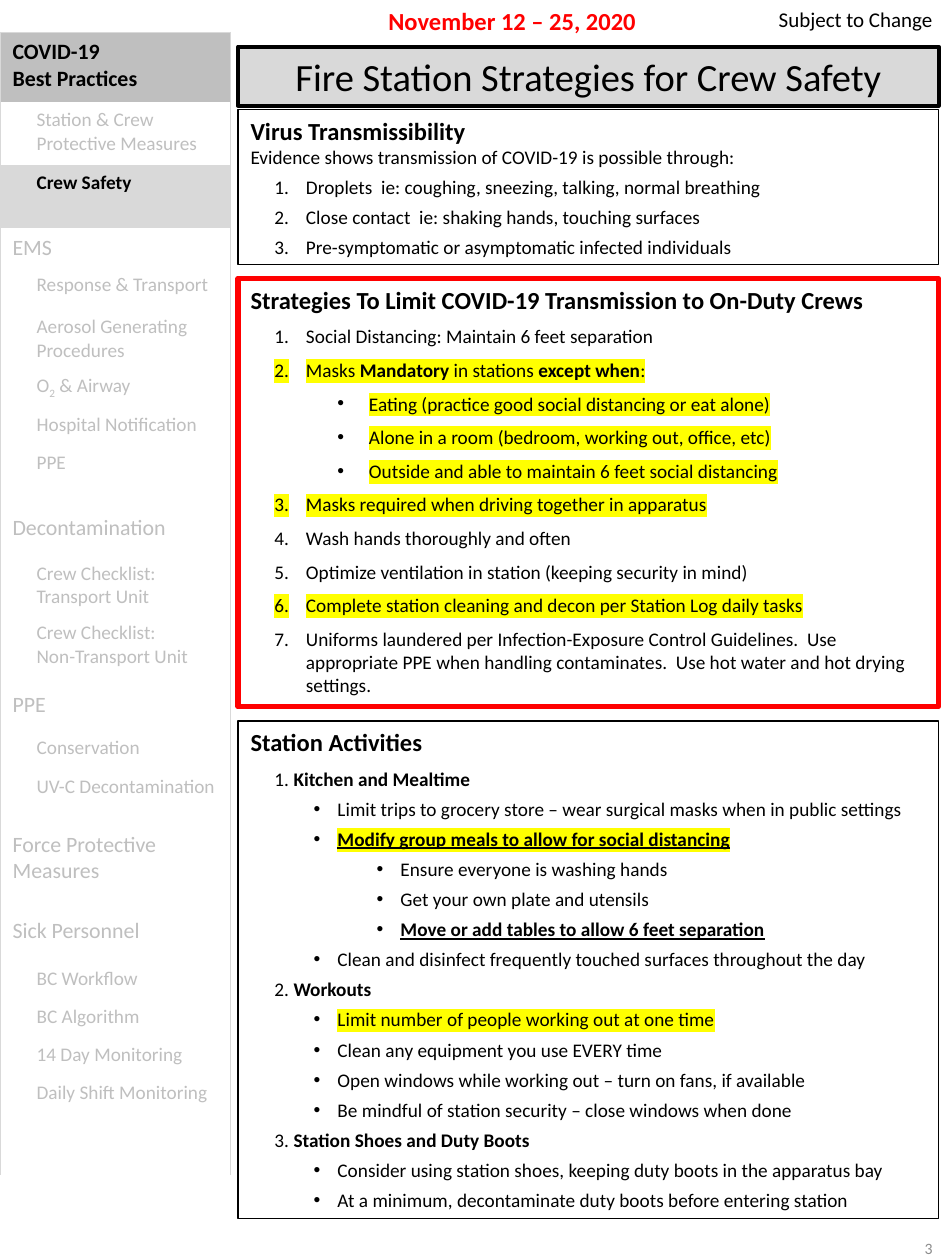
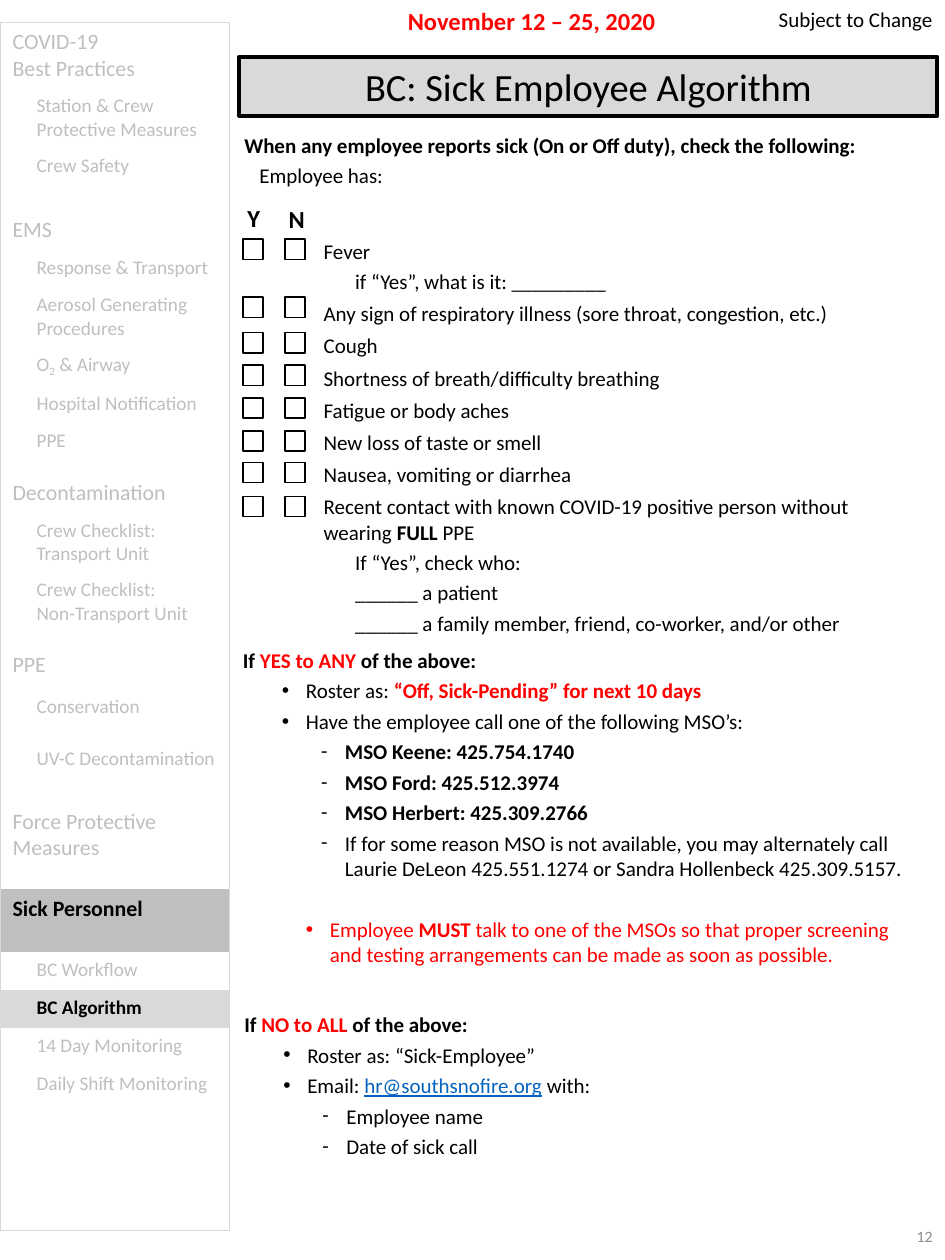
from lxml import etree
from pptx import Presentation
from pptx import util as u
from pptx.dml.color import RGBColor
from pptx.enum import shapes, text
from pptx.oxml import ns

FONT = "Calibri"
COLORS = {
    "ink": "000000", "alert": "FF0000", "mark": "FFFF00", "link": "0563C1",
    "muted": "BFBFBF", "band": "D9D9D9", "page": "8C8C8C", "paper": "FFFFFF",
}

# Paragraph styles; left and hang in inches, before and line in points
STYLES = {
    "date": dict(size=14, flags="br", align="c"),
    "notice": dict(size=12, align="r"),
    "number": dict(size=9, flags="p", align="r"),
    "title": dict(size=22, align="c"),
    "nav head": dict(size=12.5, flags="m"),
    "nav item": dict(size=11, flags="m", left=0.19),
    "nav head on": dict(size=12.5, flags="b"),
    "nav item on": dict(size=11, flags="b", left=0.19),
    "head": dict(size=14, flags="b"),
    "body": dict(size=11),
    "route": dict(size=11, level=1, left=0.44, hang=0.25, before=3, line=14.2, bullet="1."),
    "rule": dict(size=11, left=0.44, hang=0.25, before=6, bullet="1."),
    "exception": dict(size=11, level=1, left=0.94, hang=0.25, before=6, bullet="•"),
    "first activity": dict(size=11, left=0.19, before=6),
    "activity": dict(size=11, left=0.19, before=3, line=14.2),
    "step": dict(size=11, level=1, left=0.69, hang=0.19, before=3, line=14.2, bullet="•"),
    "detail": dict(size=11, level=2, left=1.19, hang=0.19, before=3, line=14.2, bullet="•"),
    "question": dict(size=12, flags="b"),
    "intro": dict(size=12, left=0.12, before=3),
    "column": dict(size=14, flags="b", align="c"),
    "symptom": dict(size=12, left=0.38, before=4),
    "follow-up": dict(size=12, left=0.63, before=3),
    "action": dict(size=12, left=0.5, hang=0.19, before=3, bullet="•"),
    "contact": dict(size=12, level=1, left=0.81, hang=0.19, before=3, bullet="-"),
    "must": dict(size=12, level=1, left=0.69, hang=0.19, before=20.6, bullet="•", flags="r"),
}
ALIGN = {"l": text.PP_ALIGN.LEFT, "c": text.PP_ALIGN.CENTER, "r": text.PP_ALIGN.RIGHT}
# Run flags: b bold, u underlined, s subscript, h highlighted; the rest pick a colour
FLAG_COLORS = {"r": "alert", "l": "link", "m": "muted", "p": "page"}


def write(frame, paragraphs):
    """Fill a text frame with (style, run, ...); a run is text or (text, flags)."""
    for i, (name, *runs) in enumerate(paragraphs):
        style = STYLES[name]
        para = frame.add_paragraph() if i else frame.paragraphs[0]
        para.alignment = ALIGN[style.get("align", "l")]
        para.level = style.get("level", 0)
        if i:
            para.space_before = u.Pt(style.get("before", 0))
        if "line" in style:
            para.line_spacing = u.Pt(style["line"])
        props = para._p.get_or_add_pPr()
        props.set("marL", str(u.Inches(style.get("left", 0))))
        props.set("indent", str(-u.Inches(style.get("hang", 0))))
        bullet = style.get("bullet")
        if bullet == "1.":
            etree.SubElement(props, ns.qn("a:buAutoNum"), type="arabicPeriod")
        elif bullet:
            etree.SubElement(props, ns.qn("a:buFont"), typeface="Arial" if bullet == "•" else FONT)
            etree.SubElement(props, ns.qn("a:buChar"), char=bullet)
        for item in runs:
            words, flags = (item, "") if isinstance(item, str) else item
            flags += style.get("flags", "")
            if words == "\n":
                para.add_line_break()
                continue
            run = para.add_run()
            run.text = words
            font = run.font
            font.name, font.size = FONT, u.Pt(style["size"])
            font.bold, font.underline = "b" in flags, "u" in flags
            color = next((FLAG_COLORS[f] for f in flags if f in FLAG_COLORS), "ink")
            font.color.rgb = RGBColor.from_string(COLORS[color])
            if "s" in flags:
                font._element.set("baseline", "-25000")
            if "h" in flags:
                mark = etree.Element(ns.qn("a:highlight"))
                etree.SubElement(mark, ns.qn("a:srgbClr"), val=COLORS["mark"])
                font._element.find(ns.qn("a:solidFill")).addnext(mark)


def box(slide, at, paragraphs=(), line=None, width=1, fill=None, anchor=text.MSO_ANCHOR.TOP):
    """Place a text box, or a rectangle when a line colour is given."""
    place = [u.Inches(v) for v in at]
    if line:
        shape = slide.shapes.add_shape(shapes.MSO_SHAPE.RECTANGLE, *place)
        shape.shadow.inherit = False
        shape.line.color.rgb = RGBColor.from_string(COLORS[line])
        shape.line.width = u.Pt(width)
        if fill:
            shape.fill.solid()
            shape.fill.fore_color.rgb = RGBColor.from_string(COLORS[fill])
        else:
            shape.fill.background()
    else:
        shape = slide.shapes.add_textbox(*place)
    shape.text_frame.word_wrap = True
    shape.text_frame.vertical_anchor = anchor
    write(shape.text_frame, paragraphs)


# Navigation entries: level, then one list of runs per paragraph
NAV = [
    ("head", ["COVID-19"], ["Best Practices"]),
    ("item", ["Station & Crew Protective Measures"]),
    ("item", ["Crew Safety"]),
    ("head", ["EMS"]),
    ("item", ["Response & Transport"]),
    ("item", ["Aerosol Generating Procedures"]),
    ("item", ["O", ("2", "s"), " & Airway"]),
    ("item", ["Hospital Notification"]),
    ("item", ["PPE"]),
    ("head", ["Decontamination"]),
    ("item", ["Crew Checklist: Transport Unit"]),
    ("item", ["Crew Checklist:"], ["Non-Transport Unit"]),
    ("head", ["PPE"]),
    ("item", ["Conservation"]),
    ("item", ["UV-C Decontamination"]),
    ("head", ["Force Protective Measures"]),
    ("head", ["Sick Personnel"]),
    ("item", ["BC Workflow"]),
    ("item", ["BC Algorithm"]),
    ("item", ["14 Day Monitoring"]),
    ("item", ["Daily Shift Monitoring"]),
]
PAGES = [
    dict(title="Fire Station Strategies for Crew Safety", title_at=(1.89, 0.37, 5.56, 0.47),
         date_at=(2.58, 0, 2.97, 0.34), number="3", number_top=9.64,
         nav_top=0.26, nav_width=1.83, active=(0, 2), closed=False,
         rows=[0.55, 0.5, 0.5, 0.31, 0.33, 0.47, 0.3, 0.3, 0.51, 0.37, 0.47, 0.56, 0.35,
               0.31, 0.45, 0.69, 0.39, 0.3, 0.3, 0.3, 0.3, 0.5]),
    dict(title="BC: Sick Employee Algorithm", title_at=(1.9, 0.45, 5.54, 0.47),
         date_at=(2.78, 0, 2.88, 0.57), number="12", number_top=9.55,
         nav_top=0.18, nav_width=1.82, active=(16, 18), closed=True,
         rows=[0.52, 0.47, 0.5, 0.31, 0.3, 0.47, 0.3, 0.3, 0.4, 0.3, 0.47, 0.59, 0.34,
               0.41, 0.49, 0.69, 0.5, 0.3, 0.3, 0.3, 0.3, 0.48, 0.53]),
]

prs = Presentation()
prs.slide_width, prs.slide_height = u.Inches(7.5), u.Inches(10)

# Shared header, navigation and page number
for page in PAGES:
    slide = prs.slides.add_slide(prs.slide_layouts[6])
    box(slide, (5.81, page["number_top"], 1.69, 0.53), [("number", page["number"])],
        anchor=text.MSO_ANCHOR.MIDDLE)
    box(slide, (5.81, 0, 1.69, 0.3), [("notice", "Subject to Change")])
    box(slide, page["date_at"], [("date", "November 12 – 25, 2020")])
    box(slide, page["title_at"], [("title", page["title"])], "ink", 2.25, "band")

    rows = page["rows"]
    nav = slide.shapes.add_table(
        len(rows), 1, 0, u.Inches(page["nav_top"]),
        u.Inches(page["nav_width"]), u.Inches(sum(rows))).table
    nav.first_row = nav.horz_banding = False
    for i, height in enumerate(rows):
        nav.rows[i].height = u.Inches(height)
        cell = nav.cell(i, 0)
        fill = "paper"
        if i < len(NAV):
            level, *lines = NAV[i]
            style = f"nav {level}"
            if i in page["active"]:
                style += " on"
                fill = "muted" if level == "head" else "band"
            write(cell.text_frame, [(style, *runs) for runs in lines])
        edges = {"L": True, "R": True, "T": i == 0, "B": page["closed"] and i == len(rows) - 1}
        for side, drawn in edges.items():
            edge = etree.SubElement(cell._tc.get_or_add_tcPr(), ns.qn(f"a:ln{side}"), w="12700")
            paint = etree.SubElement(edge, ns.qn("a:solidFill" if drawn else "a:noFill"))
            if drawn:
                etree.SubElement(paint, ns.qn("a:srgbClr"), val=COLORS["band"])
        cell.fill.solid()
        cell.fill.fore_color.rgb = RGBColor.from_string(COLORS[fill])

crew_safety, sick_algorithm = prs.slides

# Crew safety: three framed panels
box(crew_safety, (1.89, 0.87, 5.56, 1.23), [
    ("head", "Virus Transmissibility"),
    ("body", "Evidence shows transmission of COVID-19 is possible through:"),
    ("route", "Droplets  ie: coughing, sneezing, talking, normal breathing"),
    ("route", "Close contact  ie: shaking hands, touching surfaces"),
    ("route", "Pre-symptomatic or asymptomatic infected individuals"),
], "ink")
box(crew_safety, (1.89, 2.21, 5.56, 3.4), [
    ("head", "Strategies To Limit COVID-19 Transmission to On-Duty Crews"),
    ("rule", "Social Distancing: Maintain 6 feet separation"),
    ("rule", ("Masks ", "h"), ("Mandatory", "hb"), (" in stations ", "h"),
     ("except when", "hb"), (":", "h")),
    ("exception", ("Eating (practice good social distancing or eat alone)", "h")),
    ("exception", ("Alone in a room (bedroom, working out, office, etc)", "h")),
    ("exception", ("Outside and able to maintain 6 feet social distancing", "h")),
    ("rule", ("Masks required when driving together in apparatus", "h")),
    ("rule", "Wash hands thoroughly and often"),
    ("rule", "Optimize ventilation in station (keeping security in mind)"),
    ("rule", ("Complete station cleaning and decon per Station Log daily tasks", "h")),
    ("rule", "Uniforms laundered per Infection-Exposure Control Guidelines.  Use appropriate PPE "
     "when handling contaminates.  Use hot water and hot drying settings."),
], "alert", 3)
box(crew_safety, (1.89, 5.72, 5.56, 3.95), [
    ("head", "Station Activities"),
    ("first activity", "1. ", ("Kitchen and Mealtime", "b")),
    ("step", "Limit trips to grocery store – wear surgical masks when in public settings"),
    ("step", ("Modify group meals to allow for social distancing", "buh")),
    ("detail", "Ensure everyone is washing hands"),
    ("detail", "Get your own plate and utensils"),
    ("detail", ("Move or add tables to allow 6 feet separation", "bu")),
    ("step", "Clean and disinfect frequently touched surfaces throughout the day"),
    ("activity", "2. ", ("Workouts", "b")),
    ("step", ("Limit number of people working out at one time", "h")),
    ("step", "Clean any equipment you use EVERY time"),
    ("step", "Open windows while working out – turn on fans, if available"),
    ("step", "Be mindful of station security – close windows when done"),
    ("activity", "3. ", ("Station Shoes and Duty Boots", "b")),
    ("step", "Consider using station shoes, keeping duty boots in the apparatus bay"),
    ("step", "At a minimum, decontaminate duty boots before entering station"),
], "ink")

# Sick employee: symptom checklist
box(sick_algorithm, (1.84, 1, 5.19, 0.55), [
    ("question", "When any employee reports sick (On or Off duty), check the following:"),
    ("intro", "Employee has:"),
])
box(sick_algorithm, (2.09, 1.84, 5.29, 3.29), [
    ("symptom", "Fever"),
    ("follow-up", "if “Yes”, what is it: _________"),
    ("symptom", "Any sign of respiratory illness (sore throat, congestion, etc.)"),
    ("symptom", "Cough"),
    ("symptom", "Shortness of breath/difficulty breathing"),
    ("symptom", "Fatigue or body aches"),
    ("symptom", "New loss of taste or smell"),
    ("symptom", "Nausea, vomiting or diarrhea"),
    ("symptom", "Recent contact with known COVID-19 positive person without wearing ",
     ("FULL ", "b"), "PPE"),
    ("follow-up", "If “Yes”, check who:"),
    ("follow-up", "______ a patient"),
    ("follow-up", "______ a family member, friend, co-worker, and/or other"),
])
for answer, label_left, label_top, check_left in [("Y", 1.83, 1.56, 1.93), ("N", 2.17, 1.57, 2.26)]:
    box(sick_algorithm, (label_left, label_top, 0.37, 0.34), [("column", answer)])
    for check_top in (1.9, 2.36, 2.64, 2.9, 3.16, 3.42, 3.67, 3.94):
        box(sick_algorithm, (check_left, check_top, 0.16, 0.16), line="ink")

# Sick employee: what to do for each outcome
box(sick_algorithm, (1.83, 5.09, 5.67, 2.66), [
    ("question", "If ", ("YES to ANY ", "r"), "of the above:"),
    ("action", "Roster as: ", ("“Off, Sick-Pending” for next 10 days", "br")),
    ("action", "Have the employee call one of the following MSO’s:"),
    ("contact", ("MSO Keene: 425.754.1740", "b")),
    ("contact", ("MSO Ford: 425.512.3974", "b")),
    ("contact", ("MSO Herbert: 425.309.2766", "b")),
    ("contact", "If for some reason MSO is not available, you may alternately call "
     "Laurie DeLeon 425.551.1274 or Sandra Hollenbeck 425.309.5157."),
    ("must", "Employee ", ("MUST", "b"), " talk to one of the MSOs so that proper screening",
     "\n", "and testing arrangements can be made as soon as possible."),
])
box(sick_algorithm, (1.84, 7.98, 5.19, 1.48), [
    ("question", "If ", ("NO to ALL ", "r"), "of the above:"),
    ("action", "Roster as: “Sick-Employee”"),
    ("action", "Email: ", ("hr@southsnofire.org", "lu"), " with:"),
    ("contact", "Employee name"),
    ("contact", "Date of sick call"),
])

prs.save("out.pptx")
